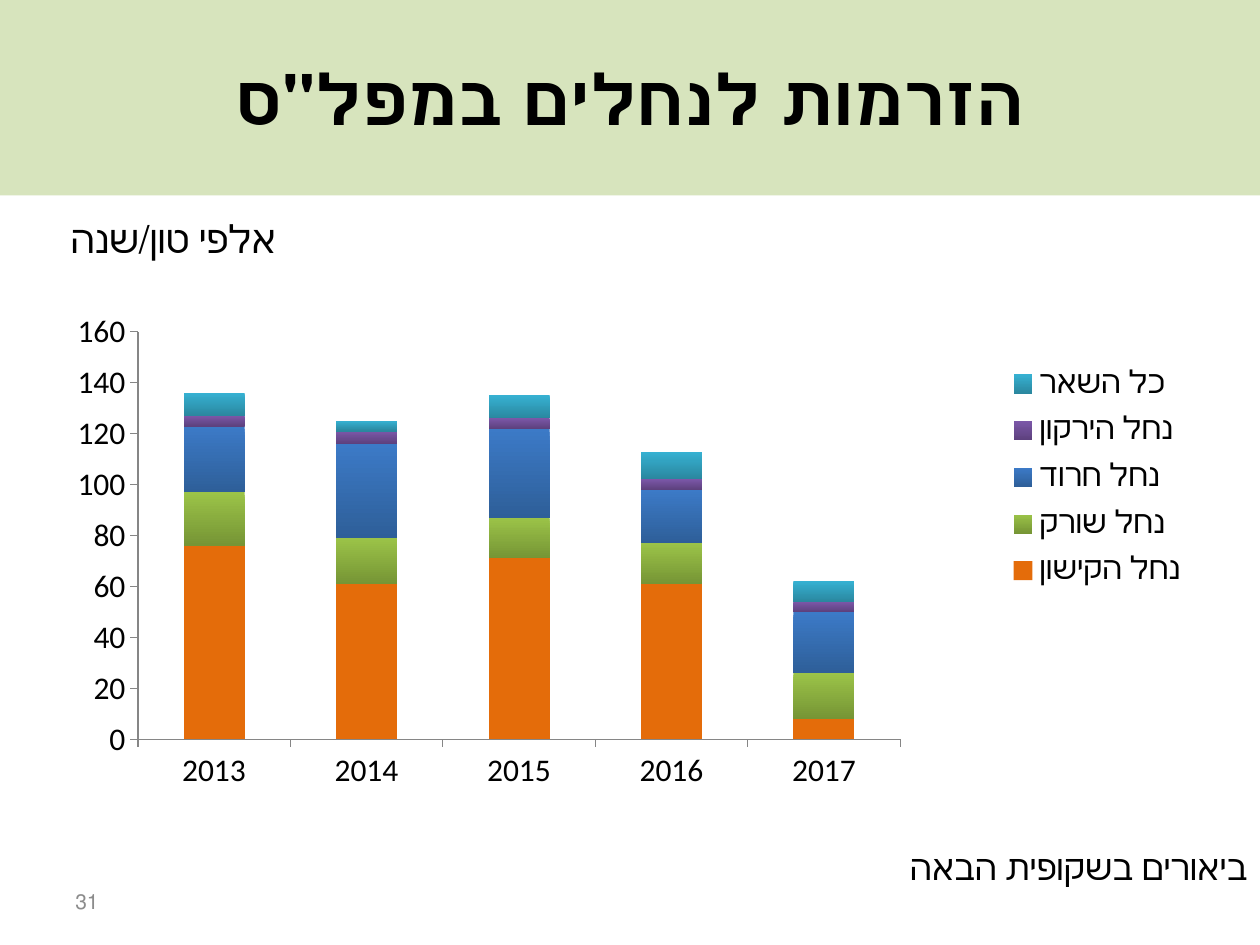
from lxml import etree
from pptx import Presentation
from pptx.chart.data import CategoryChartData
from pptx.dml.color import RGBColor
from pptx.enum import chart as ch, shapes, text
from pptx.oxml import ns
from pptx.util import Cm, Pt

ALIGN = text.PP_ALIGN
YEARS = ["2013", "2014", "2015", "2016", "2017"]
# Name, values, colours from top to bottom of a bar
RIVERS = [
    ("נחל הקישון", (76, 61, 71, 61, 8), ("E46C0A",)),
    ("נחל שורק", (21, 18, 16, 16, 18), ("9BC348", "769535")),
    ("נחל חרוד", (26, 37, 35, 21, 24), ("3C7AC7", "2E5F99")),
    ("נחל הירקון", (4, 5, 4, 4, 4), ("7B57A8", "5D417E")),
    ("כל השאר", (9, 4, 9, 11, 8), ("36B1D2", "2A879F")),
]


def color(code):
    return RGBColor.from_string(code)


def place(node, index, box, inner=False):
    """Give a chart part a manual layout, in fractions of the chart."""
    for old in node.findall(ns.qn("c:layout")):
        node.remove(old)
    layout = etree.Element(ns.qn("c:layout"))
    manual = etree.SubElement(layout, ns.qn("c:manualLayout"))
    rules = [("layoutTarget", "inner")] if inner else []
    rules += [("xMode", "edge"), ("yMode", "edge")]
    rules += zip("xywh", box)
    for tag, val in rules:
        etree.SubElement(manual, ns.qn("c:" + tag)).set("val", str(val))
    node.insert(index, layout)


class Deck:
    font = "Calibri"
    ink = "000000"
    axis = "868686"

    def __init__(self):
        self.prs = Presentation()
        self.prs.slide_width, self.prs.slide_height = Cm(25.4), Cm(19.05)
        self.slide = self.prs.slides.add_slide(self.prs.slide_layouts[6])

    def letter(self, shape, words, size, align, font=None, ink=None, bold=False, mid=False):
        frame = shape.text_frame
        frame.word_wrap = True
        frame.vertical_anchor = text.MSO_ANCHOR.MIDDLE if mid else text.MSO_ANCHOR.TOP
        frame.text = words
        par = frame.paragraphs[0]
        par.alignment = align
        par._p.get_or_add_pPr().set("rtl", "1")
        run = par.runs[0].font
        run.name, run.size, run.bold = font or self.font, Pt(size), bold
        run.color.rgb = color(ink or self.ink)

    def label(self, box, words, size, align, **style):
        shape = self.slide.shapes.add_textbox(*map(Cm, box))
        self.letter(shape, words, size, align, **style)

    def band(self, box, fill, words, size):
        shape = self.slide.shapes.add_shape(shapes.MSO_SHAPE.RECTANGLE, *map(Cm, box))
        shape.shadow.inherit = False
        shape.fill.solid()
        shape.fill.fore_color.rgb = color(fill)
        shape.line.fill.background()
        self.letter(shape, words, size, ALIGN.CENTER, bold=True, mid=True)

    def paint(self, fill, codes):
        if len(codes) == 1:
            fill.solid()
            fill.fore_color.rgb = color(codes[0])
            return
        fill.gradient()
        fill.gradient_angle = 270
        for stop, code in zip(fill.gradient_stops, codes):
            stop.color.rgb = color(code)

    def chart(self, box, cats, rows, plot, key):
        data = CategoryChartData(number_format="#,##0")
        data.categories = cats
        for name, vals, _ in rows:
            data.add_series(name, vals)
        kind = ch.XL_CHART_TYPE.COLUMN_STACKED
        chart = self.slide.shapes.add_chart(kind, *map(Cm, box), data).chart
        chart.has_title = False
        chart.font.name, chart.font.size = self.font, Pt(18)
        chart.font.color.rgb = color(self.ink)

        # Bars
        bars = chart.plots[0]
        bars.gap_width, bars.overlap = 150, 100
        bars.vary_by_categories = False
        for series, (_, _, codes) in zip(bars.series, rows):
            self.paint(series.format.fill, codes)

        # Axes
        for axis in (chart.category_axis, chart.value_axis):
            axis.has_major_gridlines = False
            axis.major_tick_mark = ch.XL_TICK_MARK.OUTSIDE
            axis.minor_tick_mark = ch.XL_TICK_MARK.NONE
            axis.format.line.color.rgb = color(self.axis)
            axis.format.line.width = Pt(0.75)
        scale = chart.value_axis
        scale.minimum_scale, scale.maximum_scale, scale.major_unit = 0, 160, 20
        scale.tick_labels.number_format = "#,##0"
        scale.tick_labels.number_format_is_linked = False

        # Legend and layout
        chart.has_legend = True
        chart.legend.position = ch.XL_LEGEND_POSITION.RIGHT
        chart.legend.include_in_layout = False
        place(chart.legend._element, 1, key)
        place(chart._chartSpace.chart.plotArea, 0, plot, inner=True)


def main():
    deck = Deck()

    # Note and chart
    deck.label((0, 16.92, 25.4, 1.12), "ביאורים בשקופית הבאה", 20, ALIGN.JUSTIFY, font="Arial")
    deck.chart((0.3, 5.41, 24.79, 10.67), YEARS, RIVERS,
               plot=(0.1, 0.12, 0.62, 0.77), key=(0.78, 0.16, 0.2, 0.47))

    # Unit, title and page number
    deck.label((0.89, 4.22, 5.21, 1.19), "אלפי טון/שנה", 22, ALIGN.CENTER)
    deck.band((0, 0, 25.4, 3.94), "D7E4BD", "הזרמות לנחלים במפל\"ס", 40)
    deck.label((1.27, 17.65, 5.92, 1.02), "31", 12, ALIGN.LEFT, ink="8C8C8C", mid=True)

    deck.prs.save("out.pptx")


if __name__ == "__main__":
    main()
